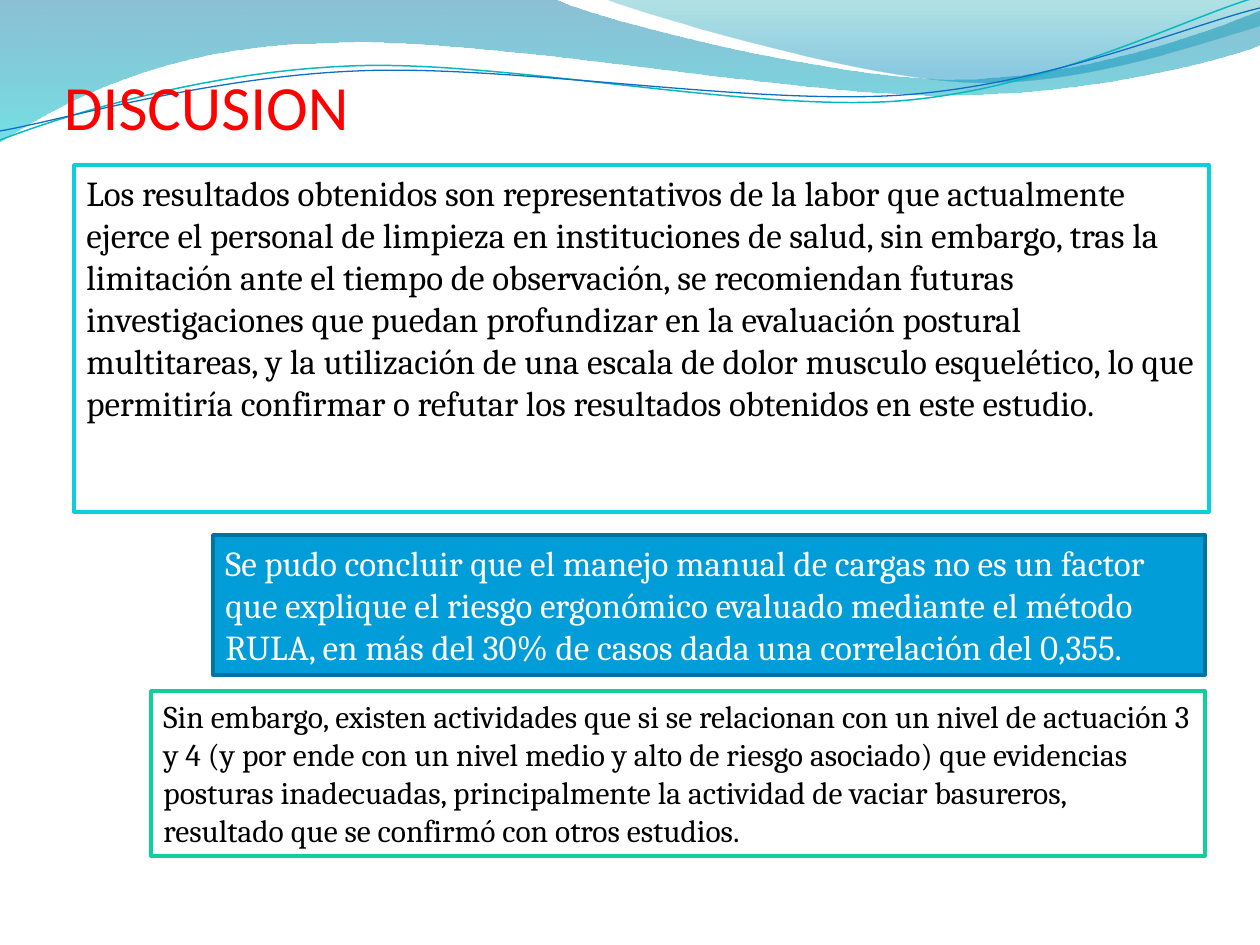
from itertools import chain

from lxml import etree
from pptx import Presentation
from pptx import util as u
from pptx.dml.color import RGBColor
from pptx.enum import shapes, text
from pptx.oxml import parse_xml
from pptx.oxml.ns import nsdecls, qn

PX = 914400 / 126
COLORS = {
    "white": "FFFFFF", "black": "000000", "red": "FF0000",
    "cyan": "0BD0D9", "blue": "009DD9", "dark_blue": "0074A1", "green": "10CF9B",
    "wave_teal": "00C6CF", "crest_teal": "00A1A9", "crest_blue": "008BBF",
    "line_teal": "0AB8BF", "line_blue": "0F6FC6",
}


def px(n):
    return u.Emu(round(n * PX))


def rgb(name):
    return RGBColor.from_string(COLORS[name])


def write(tf, content, size=20, font="Cambria", color="black"):
    tf.word_wrap = True
    p = tf.paragraphs[0]
    p.alignment = text.PP_ALIGN.LEFT
    r = p.add_run()
    r.text = content
    r.font.size = u.Pt(size)
    r.font.name = font
    r.font.color.rgb = rgb(color)


class Deck:
    def __init__(self, width, height):
        self.prs = Presentation()
        self.prs.slide_width, self.prs.slide_height = px(width), px(height)
        self.s = self.prs.slides.add_slide(self.prs.slide_layouts[6])

    def outline(self, start, segments, close):
        """Freeform path: a segment of one point is straight, one of three is a Bézier curve."""
        fb = self.s.shapes.build_freeform(*start, scale=PX)
        fb.add_line_segments(list(chain.from_iterable(segments)), close=close)
        sp = fb.convert_to_shape()
        sp.shadow.inherit = False
        steps = iter(list(sp._element.iter(qn("a:lnTo"))))
        for segment in segments:
            first, *others = [next(steps) for _ in segment]
            if others:
                curve = etree.Element(qn("a:cubicBezTo"))
                first.addprevious(curve)
                for step in (first, *others):
                    curve.append(step[0])
                    step.getparent().remove(step)
        return sp

    def wave(self, start, segments, stops):
        """Closed shape with a top-down gradient; stops are (position %, colour, opacity %)."""
        sp = self.outline(start, segments, True)
        sp.line.fill.background()
        sp.fill.background()
        grad = parse_xml(f'<a:gradFill {nsdecls("a")} rotWithShape="1"><a:gsLst/>'
                         '<a:lin ang="5400000" scaled="0"/></a:gradFill>')
        for pos, color, opacity in stops:
            gs = etree.SubElement(grad[0], qn("a:gs"), pos=str(pos * 1000))
            clr = etree.SubElement(gs, qn("a:srgbClr"), val=COLORS[color])
            etree.SubElement(clr, qn("a:alpha"), val=str(opacity * 1000))
        sp_pr = sp._element.spPr
        sp_pr.replace(sp_pr.find(qn("a:noFill")), grad)

    def curve(self, start, segments, color, width):
        sp = self.outline(start, segments, False)
        sp.fill.background()
        sp.line.color.rgb = rgb(color)
        sp.line.width = u.Pt(width)

    def title(self, x, y, w, h, content):
        sp = self.s.shapes.add_textbox(px(x), px(y), px(w), px(h))
        tf = sp.text_frame
        tf.vertical_anchor = text.MSO_ANCHOR.BOTTOM
        tf.margin_left = tf.margin_right = tf.margin_bottom = 0
        write(tf, content, size=36, font="Calibri", color="red")

    def box(self, x, y, w, h, content, fill, line, **fmt):
        sp = self.s.shapes.add_shape(shapes.MSO_SHAPE.RECTANGLE, px(x), px(y), px(w), px(h))
        sp.shadow.inherit = False
        sp.fill.solid()
        sp.fill.fore_color.rgb = rgb(fill)
        sp.line.color.rgb = rgb(line)
        sp.line.width = u.Pt(2)
        sp.text_frame.vertical_anchor = text.MSO_ANCHOR.TOP
        write(sp.text_frame, content, **fmt)


def main():
    deck = Deck(1260, 945)

    deck.wave((0, 0), [
        [(554, -1)],
        [(600, 21), (837, 79), (955, 79)],
        [(1075, 79), (1207, 33), (1260, 11)],
        [(1261, 45)],
        [(1239, 55), (1096, 96), (940, 95)],
        [(784, 95), (481, 35), (324, 43)],
        [(163, 45), (58, 105), (-1, 142)],
    ], [(0, "dark_blue", 45), (100, "wave_teal", 55)])
    deck.wave((604, -1), [
        [(641, 14), (859, 78), (969, 82)],
        [(1079, 87), (1211, 40), (1260, 26)],
        [(1260, 0)],
    ], [(0, "crest_teal", 30), (80, "crest_blue", 45)])
    deck.curve((0, 140), [
        [(60, 117), (199, 72), (349, 66)],
        [(498, 59), (747, 112), (898, 101)],
        [(1050, 89), (1182, 19), (1257, -3)],
    ], "line_teal", 0.85)
    deck.curve((0, 131), [
        [(59, 121), (207, 77), (357, 71)],
        [(508, 64), (752, 106), (903, 95)],
        [(1053, 84), (1186, 26), (1260, 8)],
    ], "line_blue", 0.75)

    deck.title(64, 55, 418, 88, "DISCUSION")
    deck.box(74, 165, 1135, 347,
             "Los resultados obtenidos son representativos de la labor que actualmente ejerce "
             "el personal de limpieza en instituciones de salud, sin embargo, tras la limitación "
             "ante el tiempo de observación, se recomiendan futuras investigaciones que puedan "
             "profundizar en la evaluación postural multitareas, y la utilización de una escala "
             "de dolor musculo esquelético, lo que permitiría confirmar o refutar los resultados "
             "obtenidos en este estudio.",
             "white", "cyan")
    deck.box(213, 535, 992, 140,
             "Se pudo concluir que el manejo manual de cargas no es un factor que explique el "
             "riesgo ergonómico evaluado mediante el método RULA, en más del 30% de casos dada "
             "una correlación del 0,355.",
             "blue", "dark_blue", color="white")
    deck.box(151, 691, 1054, 165,
             "Sin embargo, existen actividades que si se relacionan con un nivel de actuación 3 "
             "y 4 (y por ende con un nivel medio y alto de riesgo asociado) que evidencias "
             "posturas inadecuadas, principalmente la actividad de vaciar basureros, resultado "
             "que se confirmó con otros estudios.",
             "white", "green", size=18)

    deck.prs.save("out.pptx")


if __name__ == "__main__":
    main()
